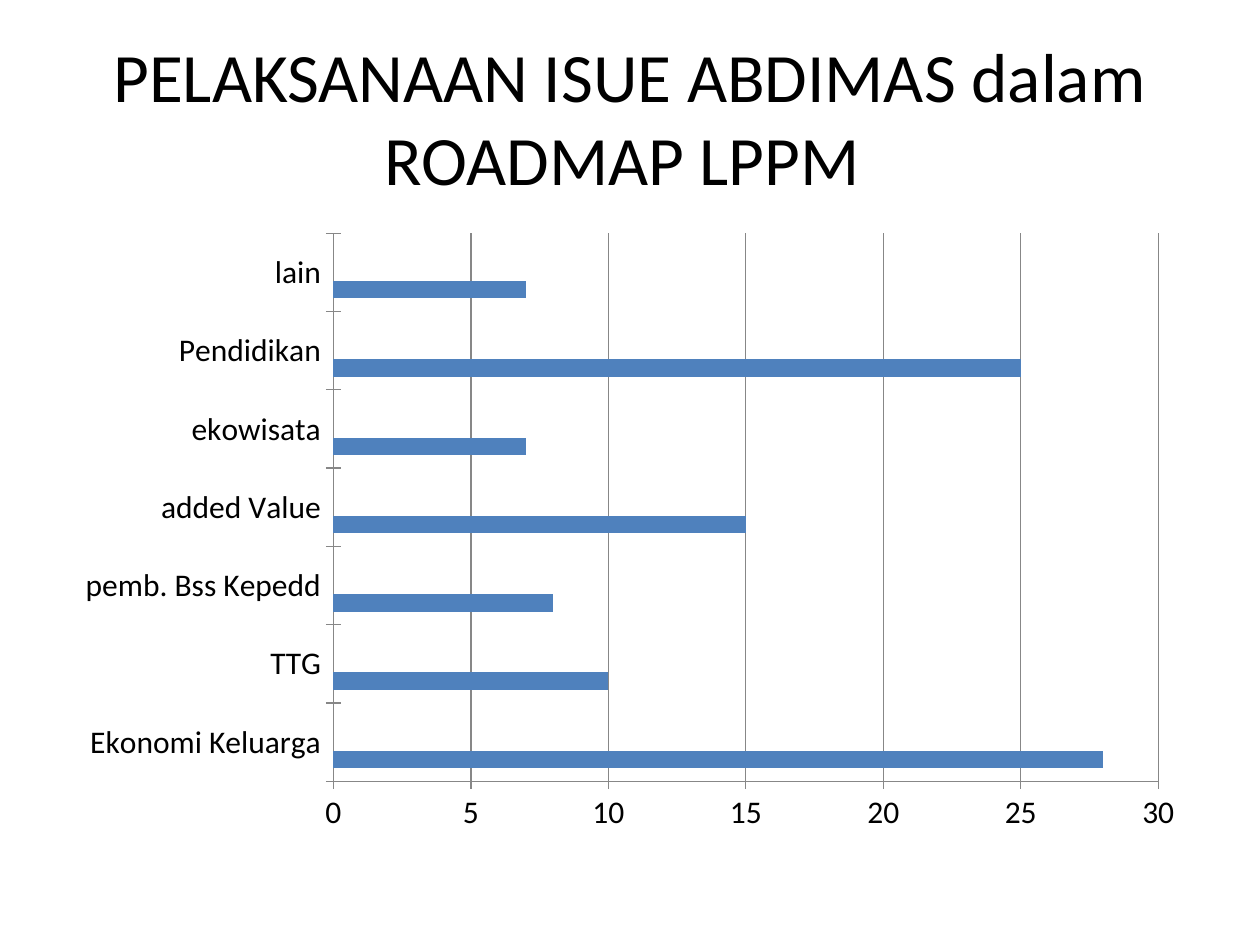
from pptx import Presentation
from pptx.chart.data import CategoryChartData
from pptx.dml.color import RGBColor
from pptx.enum.chart import XL_CHART_TYPE as ChartType, XL_TICK_MARK as TickMark
from pptx.enum.text import MSO_ANCHOR as Anchor, PP_ALIGN as Align
from pptx.util import Cm, Pt

BLACK = RGBColor(0x00, 0x00, 0x00)
GREY = RGBColor(0x87, 0x87, 0x87)
BLUE = RGBColor(0x4F, 0x81, 0xBD)
RED = RGBColor(0xC0, 0x50, 0x4D)
GREEN = RGBColor(0x9B, 0xBB, 0x59)
FONT = "Calibri"

ISSUES = {
    "Ekonomi Keluarga": 28,
    "TTG": 10,
    "pemb. Bss Kepedd": 8,
    "added Value": 15,
    "ekowisata": 7,
    "Pendidikan": 25,
    "lain": 7,
}


def style_font(font, size):
    """Apply the slide's typeface and text colour at the given size."""
    font.name = FONT
    font.size = Pt(size)
    font.color.rgb = BLACK


def add_title(page, left, top, width, height):
    """Place the centred slide title in the given box."""
    box = page.shapes.add_textbox(left, top, width, height)
    frame = box.text_frame
    frame.word_wrap = True
    frame.vertical_anchor = Anchor.MIDDLE
    frame.text = "PELAKSANAAN ISUE ABDIMAS dalam ROADMAP LPPM "
    para = frame.paragraphs[0]
    para.alignment = Align.CENTER
    style_font(para.runs[0].font, 39.6)


def add_issue_chart(page, left, top, width, height):
    """Place the bar chart of issues in the given box."""
    data = CategoryChartData()
    data.categories = list(ISSUES)
    data.add_series("Series 1", list(ISSUES.values()))
    for name in ("Series 2", "Series 3"):
        data.add_series(name, [None] * len(ISSUES))
    chart = page.shapes.add_chart(
        ChartType.BAR_CLUSTERED, left, top, width, height, data
    ).chart
    chart.has_legend = False
    chart.has_title = False
    style_font(chart.font, 18)

    plot = chart.plots[0]
    plot.vary_by_categories = False
    plot.gap_width = 150
    plot.overlap = 0
    for series, color in zip(plot.series, (BLUE, RED, GREEN)):
        series.format.fill.solid()
        series.format.fill.fore_color.rgb = color

    for axis in (chart.category_axis, chart.value_axis):
        axis.major_tick_mark = TickMark.CROSS
        axis.format.line.color.rgb = GREY
    chart.value_axis.has_major_gridlines = True
    chart.value_axis.major_gridlines.format.line.color.rgb = GREY


def main():
    """Build the slide and save the deck."""
    deck = Presentation()
    deck.slide_width, deck.slide_height = Cm(25.4), Cm(19.05)
    page = deck.slides.add_slide(deck.slide_layouts[6])
    margin = Cm(1.27)
    width = deck.slide_width - 2 * margin
    add_title(page, margin, Cm(0.76), width, Cm(3.18))
    add_issue_chart(page, margin, Cm(4.45), width, Cm(12.57))
    deck.save("out.pptx")


if __name__ == "__main__":
    main()
